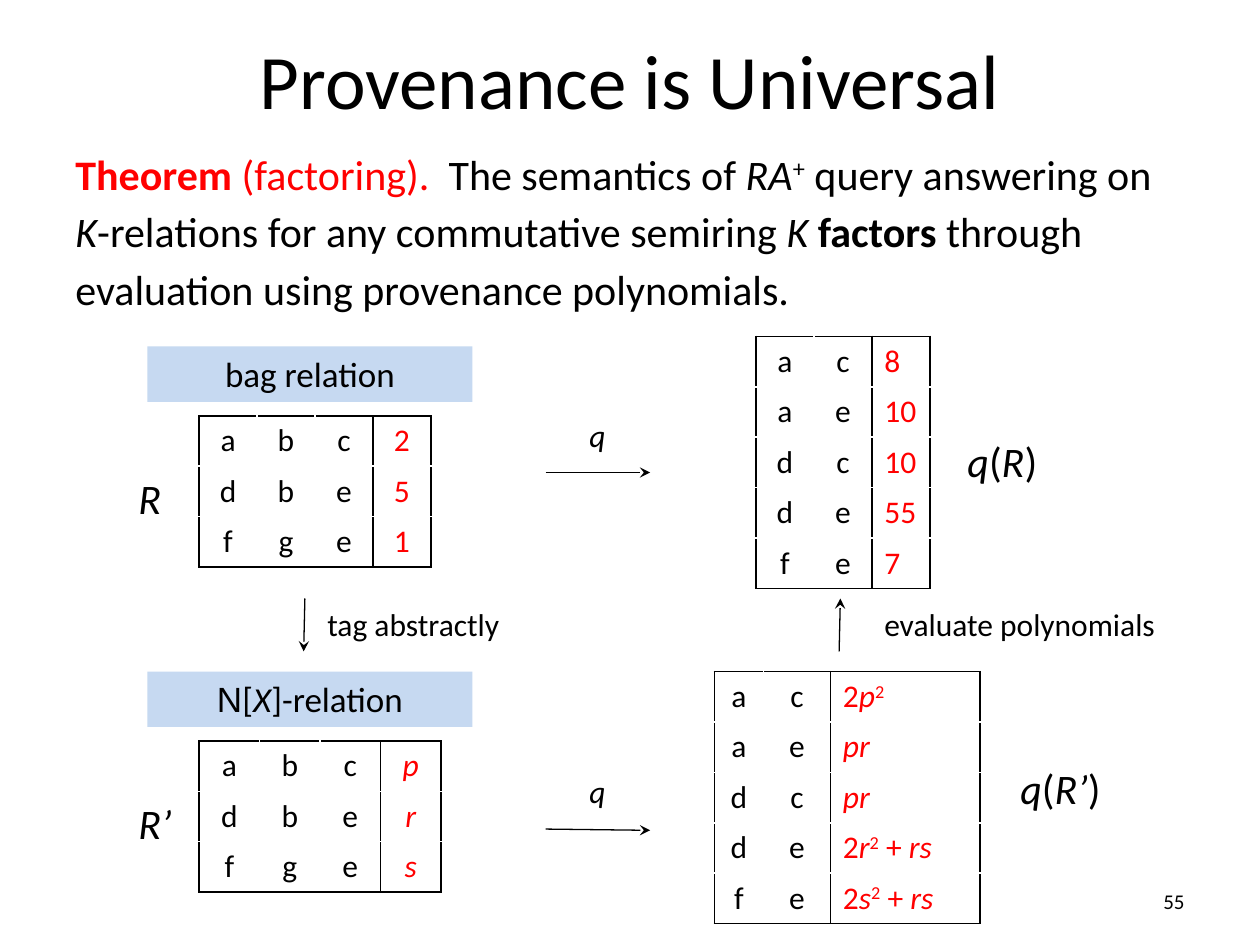
from pptx import Presentation
from pptx.dml.color import RGBColor
from pptx.enum.shapes import MSO_CONNECTOR, MSO_SHAPE
from pptx.enum.text import MSO_ANCHOR, MSO_AUTO_SIZE, PP_ALIGN
from pptx.oxml.ns import qn
from pptx.util import Inches, Pt
from lxml import etree

BLACK = RGBColor(0x00, 0x00, 0x00)
WHITE = RGBColor(0xFF, 0xFF, 0xFF)
RED = RGBColor(0xFF, 0x00, 0x00)
PALE_BLUE = RGBColor(0xC6, 0xD9, 0xF1)
LEFT, CENTER, RIGHT = PP_ALIGN.LEFT, PP_ALIGN.CENTER, PP_ALIGN.RIGHT
TOP, MIDDLE = MSO_ANCHOR.TOP, MSO_ANCHOR.MIDDLE
FIT_SHAPE = MSO_AUTO_SIZE.SHAPE_TO_FIT_TEXT
STRAIGHT = MSO_CONNECTOR.STRAIGHT
RECTANGLE = MSO_SHAPE.RECTANGLE
ROW_HEIGHT = 0.4

BOLD, ITALIC, RAISED, COLORED, SANS = "bold", "italic", "raised", "colored", "sans"


class SlideBuilder:
    font = "Calibri"
    sans_font = "Arial"

    def __init__(self, page):
        self.page = page

    def add_spans(self, para, spans, size, align=LEFT, color=BLACK):
        para.alignment = align
        for span in [spans] if isinstance(spans, str) else spans:
            words, *flags = (span,) if isinstance(span, str) else span
            run = para.add_run()
            run.text = words
            run.font.name = self.sans_font if SANS in flags else self.font
            run.font.size = Pt(size)
            run.font.bold = BOLD in flags
            run.font.italic = ITALIC in flags
            run.font.color.rgb = RED if COLORED in flags else color
            if RAISED in flags:
                run.font._element.set("baseline", "30000")

    def text(self, place, paragraphs, size, align=LEFT, anchor=TOP, gap=0, fit=True):
        box = self.page.shapes.add_textbox(*map(Inches, place))
        frame = box.text_frame
        frame.word_wrap = True
        frame.vertical_anchor = anchor
        if fit:
            frame.auto_size = FIT_SHAPE
        for index, spans in enumerate(paragraphs):
            para = frame.add_paragraph() if index else frame.paragraphs[0]
            para.space_before = Pt(gap)
            self.add_spans(para, spans, size, align)

    def banner(self, place, spans):
        shape = self.page.shapes.add_shape(RECTANGLE, *map(Inches, place))
        shape.shadow.inherit = False
        shape.fill.solid()
        shape.fill.fore_color.rgb = PALE_BLUE
        shape.line.fill.background()
        frame = shape.text_frame
        frame.word_wrap = True
        frame.vertical_anchor = TOP
        frame.auto_size = FIT_SHAPE
        self.add_spans(frame.paragraphs[0], spans, 20, CENTER)

    def arrow(self, start, finish, tip="tailEnd"):
        line = self.page.shapes.add_connector(STRAIGHT, *map(Inches, start + finish))
        line.line.color.rgb = BLACK
        line.line.width = Pt(0.75)
        properties = line._element.spPr
        end = etree.SubElement(properties.find(qn("a:ln")), qn(f"a:{tip}"))
        end.set("type", "stealth")
        etree.SubElement(properties, qn("a:effectLst"))

    def border(self, cell, side, color):
        line = etree.SubElement(cell._tc.get_or_add_tcPr(), qn(f"a:{side}"), w=str(Pt(1)))
        fill = etree.SubElement(line, qn("a:solidFill"))
        etree.SubElement(fill, qn("a:srgbClr"), val=str(color))

    def table(self, left, top, widths, rows, tag_align):
        count, last = len(rows), len(widths) - 1
        frame = self.page.shapes.add_table(
            count, len(widths), Inches(left), Inches(top),
            Inches(sum(widths)), Inches(ROW_HEIGHT * count))
        grid = frame.table
        for column, width in zip(grid.columns, widths):
            column.width = Inches(width)
        for y, row in enumerate(rows):
            grid.rows[y].height = Inches(ROW_HEIGHT)
            for x, spans in enumerate(row):
                cell = grid.cell(y, x)
                cell.margin_top = cell.margin_bottom = Inches(0.04)
                cell.vertical_anchor = MIDDLE
                is_tag = x == last
                self.add_spans(cell.text_frame.paragraphs[0], spans, 18,
                               tag_align if is_tag else CENTER, RED if is_tag else BLACK)
                edges = {"lnL": x in (0, last), "lnR": x >= last - 1,
                         "lnT": y == 0, "lnB": y == count - 1}
                for side, dark in edges.items():
                    self.border(cell, side, BLACK if dark else WHITE)
                cell.fill.solid()
                cell.fill.fore_color.rgb = WHITE


def italic(words):
    return (words, ITALIC)


def square(factor, variable):
    return [factor, italic(variable), ("2", RAISED)]


def main():
    deck = Presentation()
    deck.slide_width, deck.slide_height = Inches(10), Inches(7.5)
    builder = SlideBuilder(deck.slides.add_slide(deck.slide_layouts[6]))

    builder.text((0.5, 0, 9, 1.25), ["Provenance is Universal"], 44, CENTER, MIDDLE, fit=False)
    theorem = [
        [("Theorem ", BOLD, COLORED), ("(factoring).  ", COLORED), "The semantics of ",
         italic("RA"), ("+", RAISED), " query answering on"],
        [italic("K"), "-relations for any commutative semiring ", italic("K "),
         ("factors", BOLD), " through"],
        ["evaluation using provenance polynomials."],
    ]
    builder.text((0.5, 1.13, 9, 4.95), theorem, 24, gap=4, fit=False)

    inputs = ["abc", "dbe", "fge"]
    outputs = ["ac", "ae", "dc", "de", "fe"]
    polynomials = [
        square("2", "p"), [italic("pr")], [italic("pr")],
        square("2", "r") + [" + ", italic("rs")],
        square("2", "s") + [" + ", italic("rs")],
    ]
    tables = [
        (1.58, 3.3, [0.46] * 4, inputs, ["2", "5", "1"], CENTER),
        (1.58, 5.88, [0.48] * 4, inputs, [[italic(tag)] for tag in "prs"], CENTER),
        (6, 2.67, [0.46] * 3, outputs, ["8", "10", "10", "55", "7"], LEFT),
        (5.67, 5.33, [0.39, 0.53, 1.19], outputs, polynomials, LEFT),
    ]
    for left, top, widths, keys, tags, align in tables:
        rows = [[*key, tag] for key, tag in zip(keys, tags)]
        builder.table(left, top, widths, rows, align)

    builder.banner((1.17, 2.75, 2.58, 0.44), "bag relation")
    builder.banner((1.17, 5.33, 2.58, 0.44), [("N", SANS), "[", italic("X"), "]-relation"])

    labels = [
        ((1, 3.7, 0.42, 0.5), [italic("R")], 24),
        ((1, 6.28, 0.58, 0.5), [italic("R’")], 24),
        ((7.58, 3.41, 1, 0.5), [italic("q"), "(", italic("R"), ")"], 24),
        ((8, 6, 1, 0.5), [italic("q"), "(", italic("R’"), ")"], 24),
        ((4.58, 3.25, 0.58, 0.42), [italic("q")], 18),
        ((4.58, 6.08, 0.58, 0.42), [italic("q")], 18),
        ((2.5, 4.75, 1.83, 0.42), "tag abstractly", 18),
        ((6.92, 4.75, 2.67, 0.4), "evaluate polynomials", 18),
    ]
    for place, spans, size in labels:
        builder.text(place, [spans], size)

    builder.arrow((2.42, 4.75), (2.41, 5.17))
    builder.arrow((6.67, 4.75), (6.66, 5.17), "headEnd")
    builder.arrow((4.33, 3.75), (5.16, 3.75))
    builder.arrow((4.33, 6.58), (5.16, 6.59))

    builder.text((7.17, 6.95, 2.33, 0.4), ["55"], 12, RIGHT, MIDDLE, fit=False)
    deck.save("out.pptx")


if __name__ == "__main__":
    main()
